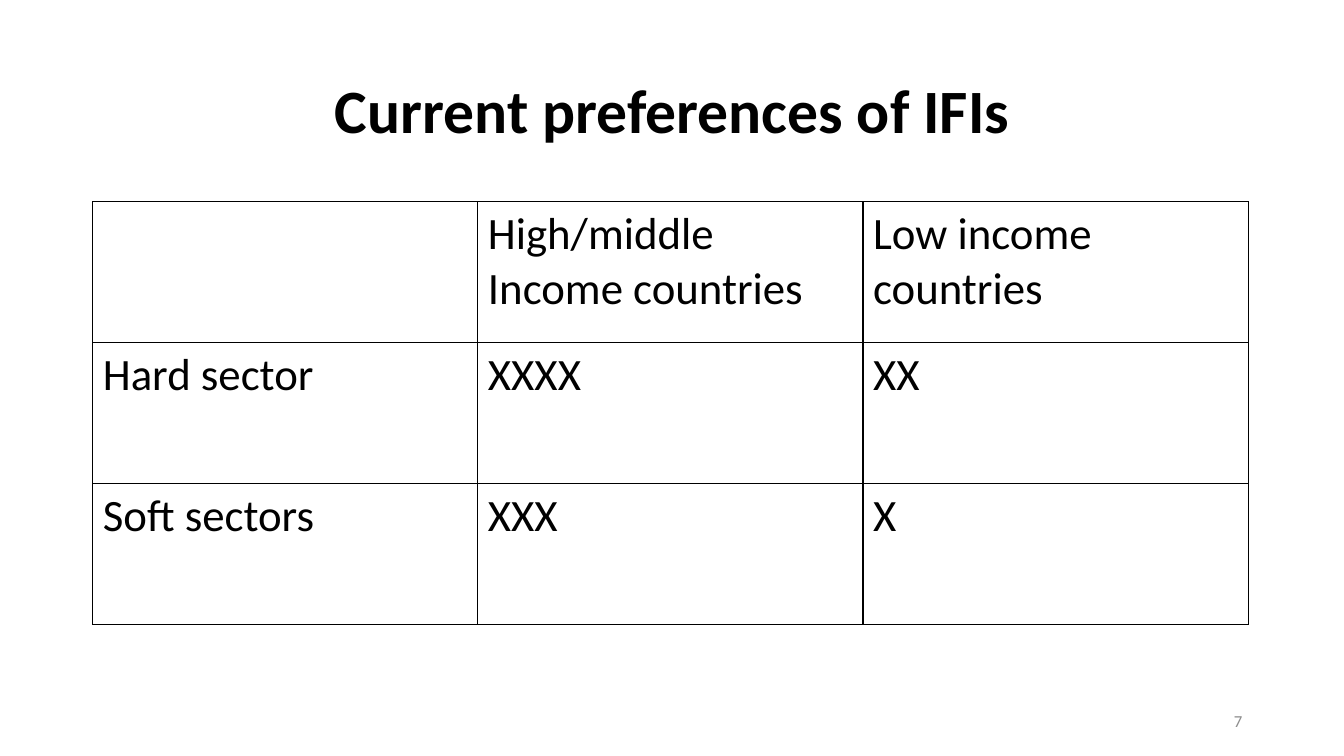
import pptx
import pptx.dml.color
import pptx.enum.text
import pptx.oxml
import pptx.oxml.ns
import pptx.util
from pptx.util import Inches

ALIGN = pptx.enum.text.PP_ALIGN
MIDDLE = pptx.enum.text.MSO_ANCHOR.MIDDLE

TITLE = "Current preferences of IFIs"
PAGE_NUMBER = "7"
PREFERENCES = [
    ["", "High/middle Income countries", "Low income countries"],
    ["Hard sector", "XXXX", "XX"],
    ["Soft sectors", "XXX", "X"],
]
BLACK, WHITE, GREY = "000000", "FFFFFF", "8C8C8C"
LEFT, TOP = 0.92, 2
COLUMN_WIDTH, ROW_HEIGHT = 3.82, 1.4


def color(hex_value):
    return pptx.dml.color.RGBColor.from_string(hex_value)


def style_text(frame, text, size, ink, bold=False, **paragraph_format):
    paragraph = frame.paragraphs[0]
    paragraph.text = text
    for name, value in paragraph_format.items():
        setattr(paragraph, name, value)
    font_format = {"name": "Calibri", "size": pptx.util.Pt(size), "bold": bold}
    for name, value in font_format.items():
        setattr(paragraph.font, name, value)
    paragraph.font.color.rgb = color(ink)


def add_text(slide, box, *text_args, **text_format):
    frame = slide.shapes.add_textbox(*map(Inches, box)).text_frame
    frame.word_wrap = True
    frame.vertical_anchor = MIDDLE
    style_text(frame, *text_args, **text_format)


def add_borders(cell):
    properties = cell._tc.get_or_add_tcPr()
    for side in ("lnL", "lnR", "lnT", "lnB"):
        properties.append(pptx.oxml.parse_xml(
            f'<a:{side} {pptx.oxml.ns.nsdecls("a")} w="12700"><a:solidFill>'
            f'<a:srgbClr val="{BLACK}"/></a:solidFill></a:{side}>'))


def add_preferences(slide):
    row_count, column_count = len(PREFERENCES), len(PREFERENCES[0])
    table = slide.shapes.add_table(
        row_count, column_count, Inches(LEFT), Inches(TOP),
        Inches(COLUMN_WIDTH * column_count), Inches(ROW_HEIGHT * row_count)).table
    for flag in ("first_row", "horz_banding"):
        setattr(table, flag, False)
    for row_index, row in enumerate(PREFERENCES):
        for column_index, text in enumerate(row):
            cell = table.cell(row_index, column_index)
            add_borders(cell)
            cell.fill.solid()
            cell.fill.fore_color.rgb = color(WHITE)
            style_text(cell.text_frame, text, 32, BLACK)


def main():
    deck = pptx.Presentation()
    deck.slide_width, deck.slide_height = Inches(13.33), Inches(7.5)
    slide = deck.slides.add_slide(deck.slide_layouts[6])
    add_text(slide, (LEFT, 0.4, 11.5, 1.45), TITLE, 44, BLACK,
             bold=True, alignment=ALIGN.CENTER, line_spacing=0.9)
    add_preferences(slide)
    add_text(slide, (9.42, 6.95, 3, 0.4), PAGE_NUMBER, 12, GREY,
             alignment=ALIGN.RIGHT)
    deck.save("out.pptx")


if __name__ == "__main__":
    main()
